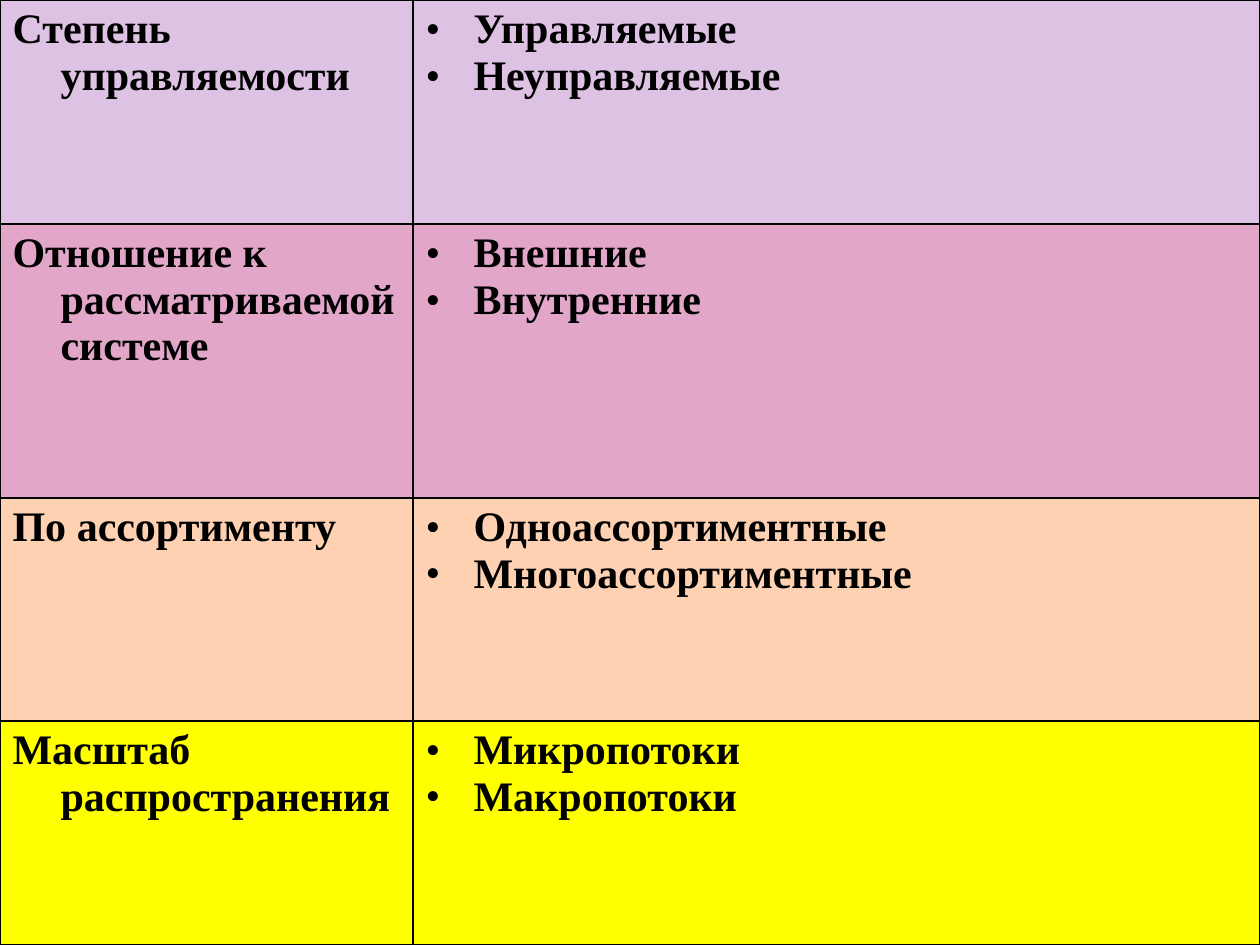
from lxml import etree
from pptx import Presentation
from pptx.dml.color import RGBColor
from pptx.enum.text import PP_ALIGN
from pptx.oxml.ns import qn
from pptx.util import Emu, Pt

LEFT, JUSTIFY = PP_ALIGN.LEFT, PP_ALIGN.JUSTIFY
BLANK_LAYOUT = 6
WIDTH, HEIGHT = 1260, 945
COLUMNS = [413, 847]
ROWS = [
    (224, "DEC2E4", "Степень управляемости", ["Управляемые", "Неуправляемые"]),
    (274, "E2A7C8", "Отношение к рассматриваемой системе", ["Внешние", "Внутренние"]),
    (223, "FDD1B1", "По ассортименту", ["Одноассортиментные", "Многоассортиментные"]),
    (224, "FFFF00", "Масштаб распространения", ["Микропотоки", "Макропотоки"]),
]


def px(n):
    return Emu(round(n * 914400 / 126))


def rgb(value):
    return RGBColor.from_string(value)


def add_element(parent, tag, **attrs):
    return etree.SubElement(parent, qn(tag), {k: str(v) for k, v in attrs.items()})


def write(p, text, font, size, color="000000", bold=True, align=LEFT, indent=48, bullet=None):
    p.alignment = align
    pPr = p._p.get_or_add_pPr()
    pPr.set("marL", str(px(indent)))
    pPr.set("indent", str(-px(indent)))
    if bullet:
        add_element(pPr, "a:buFont", typeface=font)
        add_element(pPr, "a:buChar", char=bullet)
        tabs = add_element(pPr, "a:tabLst")
        add_element(tabs, "a:tab", pos=px(32), algn="l")
    else:
        add_element(pPr, "a:buNone")
    r = p.add_run()
    r.text = text
    r.font.name = font
    r.font.size = Pt(size)
    r.font.bold = bold
    r.font.color.rgb = rgb(color)


class Deck:
    font = "Times New Roman"
    size = 24
    border = "000000"

    def __init__(self):
        self.prs = Presentation()
        self.prs.slide_width, self.prs.slide_height = px(WIDTH), px(HEIGHT)
        self.s = self.prs.slides.add_slide(self.prs.slide_layouts[BLANK_LAYOUT])

    def cell(self, cell, fill, lines, **fmt):
        tcPr = cell._tc.get_or_add_tcPr()
        for side in "LRTB":
            ln = add_element(tcPr, f"a:ln{side}", w=Pt(1))
            add_element(add_element(ln, "a:solidFill"), "a:srgbClr", val=self.border)
        cell.fill.solid()
        cell.fill.fore_color.rgb = rgb(fill)
        tf = cell.text_frame
        for i, line in enumerate(lines):
            p = tf.add_paragraph() if i else tf.paragraphs[0]
            write(p, line, self.font, self.size, **fmt)

    def table(self, x, y, columns, rows):
        height = sum(row[0] for row in rows)
        frame = self.s.shapes.add_table(
            len(rows), len(columns), px(x), px(y), px(sum(columns)), px(height))
        table = frame.table
        table.first_row = table.horz_banding = False
        for column, width in zip(table.columns, columns):
            column.width = px(width)
        for i, (row_height, fill, feature, kinds) in enumerate(rows):
            table.rows[i].height = px(row_height)
            self.cell(table.cell(i, 0), fill, [feature])
            self.cell(table.cell(i, 1), fill, kinds, align=JUSTIFY, bullet="•")


def main():
    deck = Deck()
    deck.table(0, 0, COLUMNS, ROWS)
    deck.prs.save("out.pptx")


if __name__ == "__main__":
    main()
